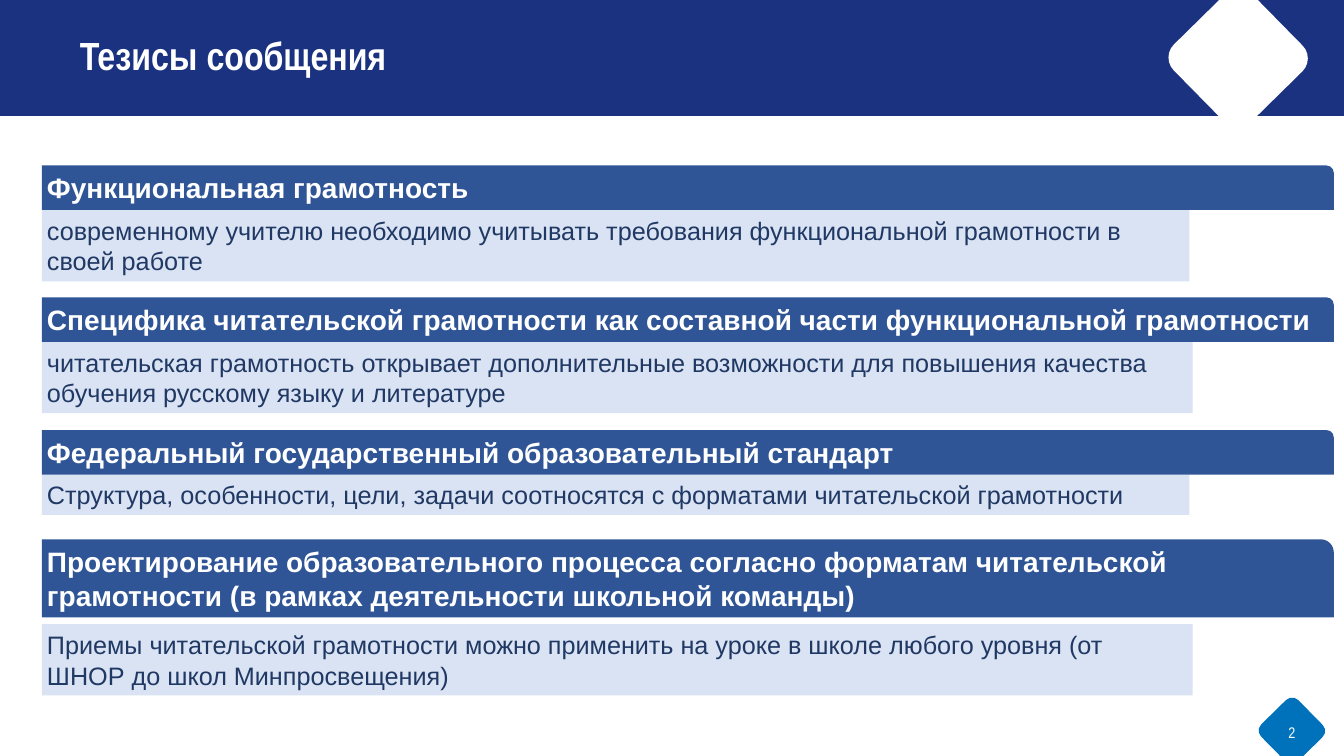
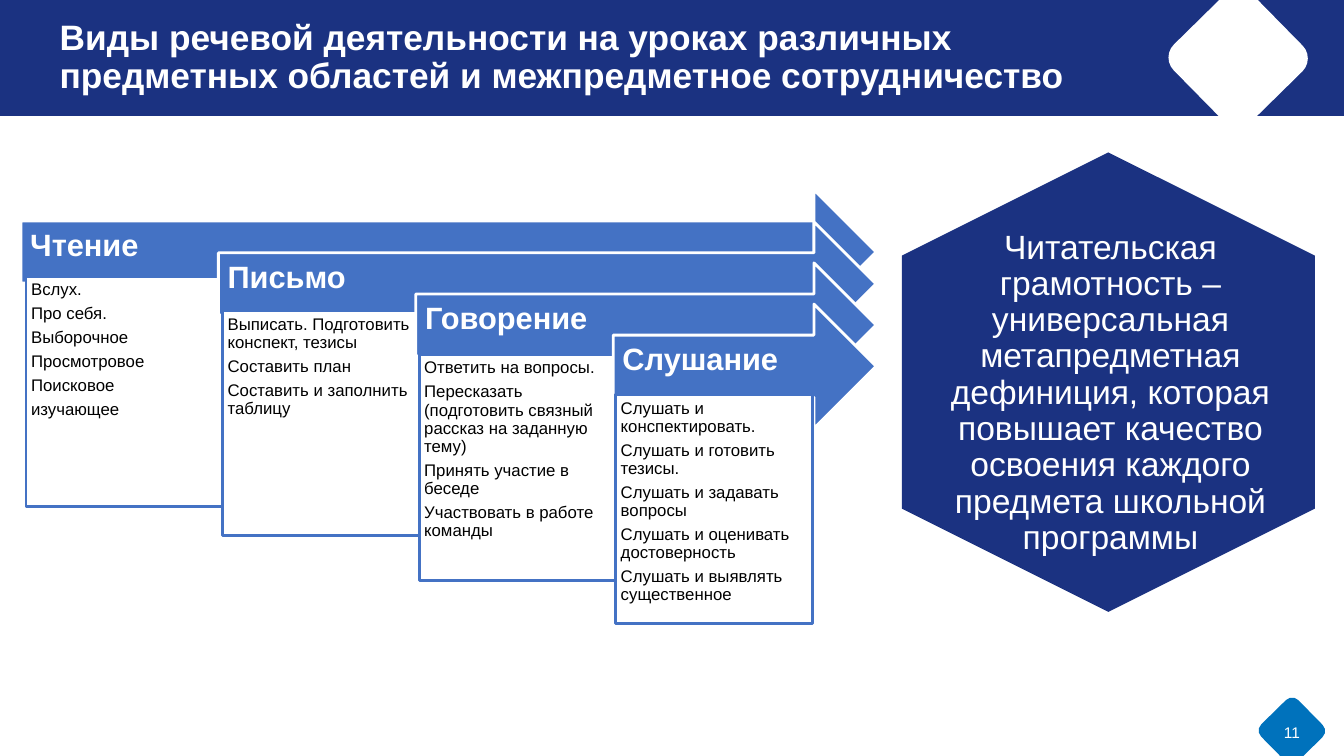
from dataclasses import dataclass

from pptx import Presentation
from pptx import util as u
from pptx.dml.color import RGBColor
from pptx.enum import shapes, text

COLUMNS, ROWS = 160, 90
CELL = u.Inches(1) // 12
BAND_HEIGHT = 13.8
TILT = 45.5
COLORS = {
    "navy": "1B3281",
    "badge": "0072BC",
    "heading": "2F5597",
    "detail": "DAE3F3",
    "ink": "203864",
    "arrow": "4472C4",
    "white": "FFFFFF",
    "black": "000000",
}
KIND = shapes.MSO_SHAPE
ALIGN = text.PP_ALIGN
ANCHOR = text.MSO_ANCHOR


@dataclass(frozen=True)
class Area:
    left: float
    top: float
    width: float
    height: float

    def lengths(self) -> list[int]:
        return [grid(n) for n in (self.left, self.top, self.width, self.height)]


@dataclass(frozen=True)
class Thesis:
    heading: str
    detail: str
    top: float
    detail_width: float = 136.6
    heading_lines: int = 1
    detail_lines: int = 2
    gap: float = 0


@dataclass(frozen=True)
class Activity:
    name: str
    tasks: tuple[str, ...]
    arrow_top: float
    box_top: float
    box_height: float


BADGE = Area(150.7, 83.9, 6.2, 6.2)

THESES = (
    Thesis(
        "Функциональная грамотность",
        "современному учителю необходимо учитывать требования "
        "функциональной грамотности в своей работе",
        top=19.7,
    ),
    Thesis(
        "Специфика читательской грамотности как составной части "
        "функциональной грамотности",
        "читательская грамотность открывает дополнительные возможности "
        "для повышения качества обучения русскому языку и литературе",
        top=35.4,
        detail_width=137,
    ),
    Thesis(
        "Федеральный государственный образовательный стандарт",
        "Структура, особенности, цели, задачи соотносятся "
        "с форматами читательской грамотности",
        top=51.2,
        detail_lines=1,
    ),
    Thesis(
        "Проектирование образовательного процесса согласно форматам "
        "читательской грамотности (в рамках деятельности школьной команды)",
        "Приемы читательской грамотности можно применить на уроке "
        "в школе любого уровня (от ШНОР до школ Минпросвещения)",
        top=64.2,
        detail_width=137,
        heading_lines=2,
        gap=0.8,
    ),
)

ACTIVITIES = (
    Activity(
        "Чтение",
        ("Вслух.", "Про себя.", "Выборочное", "Просмотровое", "Поисковое", "изучающее"),
        22.6, 32.9, 27.4,
    ),
    Activity(
        "Письмо",
        (
            "Выписать. Подготовить конспект, тезисы",
            "Составить план",
            "Составить и заполнить таблицу",
        ),
        26.4, 37, 26.8,
    ),
    Activity(
        "Говорение",
        (
            "Ответить на вопросы.",
            "Пересказать (подготовить связный рассказ на заданную тему)",
            "Принять участие в беседе",
            "Участвовать в работе команды",
        ),
        31.3, 42.2, 26.9,
    ),
    Activity(
        "Слушание",
        (
            "Слушать и конспектировать.",
            "Слушать и готовить тезисы.",
            "Слушать и задавать вопросы",
            "Слушать и оценивать достоверность",
            "Слушать и выявлять существенное",
        ),
        36.2, 47, 27.2,
    ),
)


def grid(cells: float) -> int:
    return u.Emu(round(cells * CELL))


def color(name: str) -> RGBColor:
    return RGBColor.from_string(COLORS[name])


def write(shape, *lines: str, size: float, ink: str = "white", font: str = "Arial",
          bold: bool = False, align=ALIGN.LEFT, anchor=ANCHOR.MIDDLE,
          spacing: float = 1.0, after: float = 0,
          insets: tuple[float, ...] = (0.6, 0.6, 0.6, 0.6)) -> None:
    frame = shape.text_frame
    frame.word_wrap = True
    frame.auto_size = text.MSO_AUTO_SIZE.NONE
    frame.vertical_anchor = anchor
    (frame.margin_left, frame.margin_top,
     frame.margin_right, frame.margin_bottom) = map(grid, insets)
    frame.text = "\n".join(lines)
    for para in frame.paragraphs:
        para.alignment = align
        para.line_spacing = spacing
        para.space_before = u.Pt(0)
        para.space_after = u.Pt(after)
        for span in para.runs:
            span.font.size = u.Pt(size)
            span.font.name = font
            span.font.bold = bold
            span.font.color.rgb = color(ink)


def draw(page, kind, area: Area, fill: str, line: str | None = None,
         rotation: float = 0):
    shape = page.shapes.add_shape(kind, *area.lengths())
    shape.shadow.inherit = False
    shape.rotation = rotation
    shape.fill.solid()
    shape.fill.fore_color.rgb = color(fill)
    if line:
        shape.line.color.rgb = color(line)
        shape.line.width = u.Pt(2)
    else:
        shape.line.fill.background()
    return shape


def decorate_layout(page) -> None:
    first = page.slide_layout.placeholders[0].element
    decor = (
        draw(page, KIND.ROUNDED_RECTANGLE, BADGE, "badge", rotation=TILT),
        draw(page, KIND.RECTANGLE, Area(0, 0, COLUMNS, BAND_HEIGHT), "navy"),
        draw(page, KIND.ROUNDED_RECTANGLE, Area(140.9, 0.4, 13, 13), "white",
             rotation=TILT),
    )
    for number, shape in enumerate(decor, start=101):
        shape.element.nvSpPr.cNvPr.set("id", str(number))
        first.addprevious(shape.element)


def add_page(deck, title: str, number: str, left: float, size: float, font: str):
    page = deck.slides.add_slide(deck.slide_layouts[5])
    heading = page.shapes.title
    heading.left, heading.top, heading.width, heading.height = Area(
        left, 0, 130.6, BAND_HEIGHT).lengths()
    write(heading, title, size=size, font=font, bold=True, spacing=0.9)
    box = page.shapes.add_textbox(
        *Area(BADGE.left, 85.4, BADGE.width, 3.5).lengths())
    write(box, number, size=11, font=font, align=ALIGN.CENTER)
    return page


def draw_thesis(page, thesis: Thesis) -> None:
    left = 5
    heading_height = 1.3 + 4 * thesis.heading_lines
    detail_top = thesis.top + heading_height + thesis.gap
    detail = draw(page, KIND.RECTANGLE,
                  Area(left, detail_top, thesis.detail_width,
                       1.1 + 3.7 * thesis.detail_lines), "detail")
    write(detail, thesis.detail, size=18, ink="ink")
    heading = draw(page, KIND.ROUND_1_RECTANGLE,
                   Area(left, thesis.top, 153.8, heading_height), "heading")
    write(heading, thesis.heading, size=20, bold=True)


def draw_activity(page, step: int, activity: Activity) -> None:
    pitch, tip = 23.4, 104.3
    arrow_left = 2.5 + 23.5 * step
    arrow = draw(page, KIND.RIGHT_ARROW,
                 Area(arrow_left, activity.arrow_top, tip - arrow_left, 14.8),
                 "arrow", line="white")
    write(arrow, activity.name, size=22, bold=True, spacing=0.9,
          insets=(1.1, 1.1, 3.4, 2.4))
    box = draw(page, KIND.RECTANGLE,
               Area(3.1 + pitch * step, activity.box_top, pitch, activity.box_height),
               "white", line="arrow")
    write(box, *activity.tasks, size=12, ink="black", anchor=ANCHOR.TOP,
          spacing=0.9, after=4.2)


def draw_conclusion(page) -> None:
    draw(page, KIND.HEXAGON, Area(104.6, 20.9, 54.7, 49.2), "navy", rotation=90)
    box = page.shapes.add_textbox(*Area(106.2, 26.8, 52, 50.9).lengths())
    write(box,
          "Читательская\vграмотность – универсальная метапредметная дефиниция, "
          "которая повышает качество освоения каждого предмета школьной программы",
          size=24, align=ALIGN.CENTER, anchor=ANCHOR.TOP, spacing=0.9)


def main() -> None:
    deck = Presentation()
    deck.slide_width, deck.slide_height = grid(COLUMNS), grid(ROWS)

    page = add_page(deck, "Тезисы сообщения", "2", left=8.9, size=28,
                    font="Arial Narrow")
    decorate_layout(page)
    for thesis in THESES:
        draw_thesis(page, thesis)

    page = add_page(deck,
                    "Виды речевой деятельности на уроках различных предметных "
                    "областей и межпредметное сотрудничество",
                    "11", left=6.5, size=25.2, font="Arial")
    for step, activity in enumerate(ACTIVITIES):
        draw_activity(page, step, activity)
    draw_conclusion(page)

    deck.save("out.pptx")


if __name__ == "__main__":
    main()
